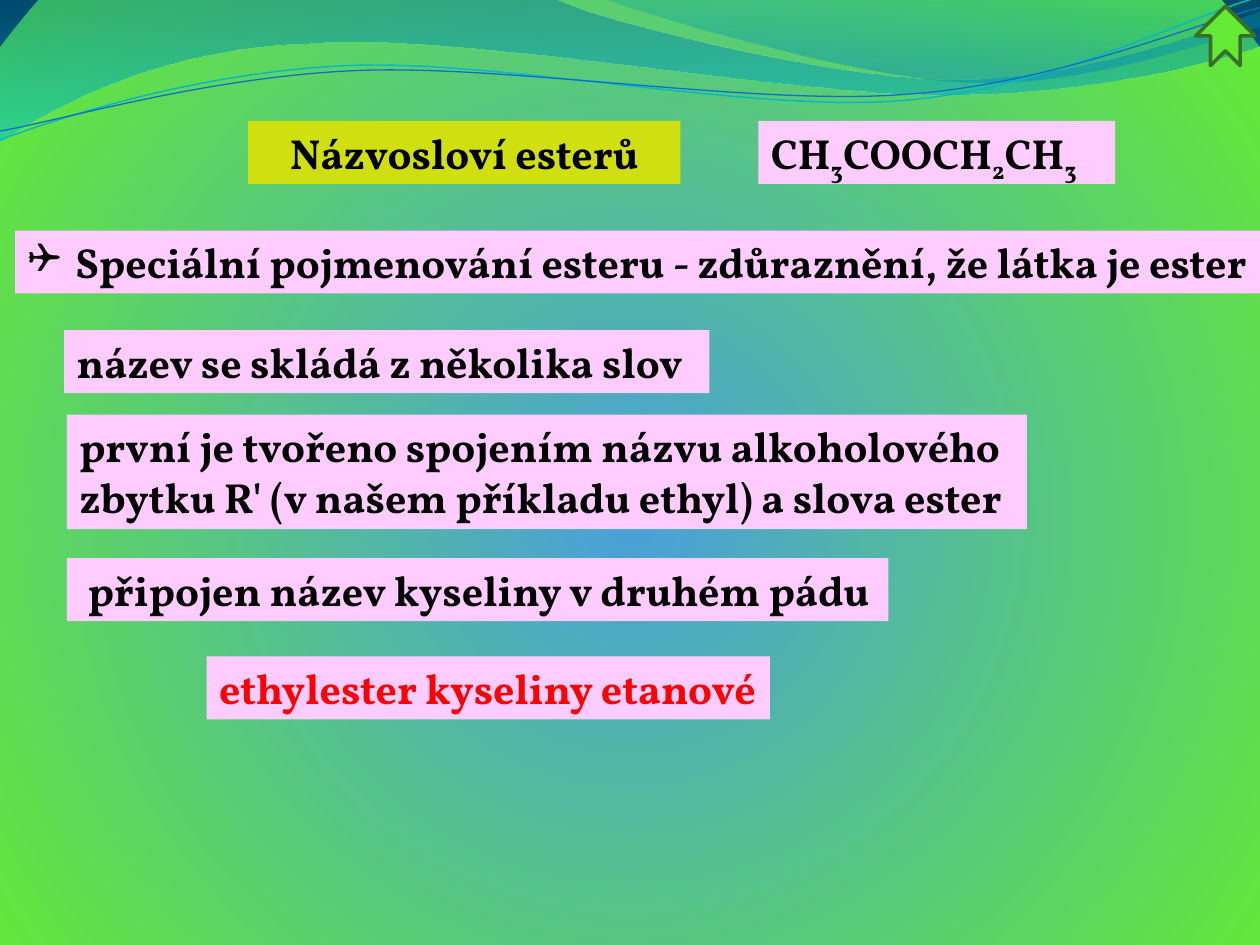
import math

import pptx
import pptx.util
import pptx.oxml
from lxml import etree
from pptx.dml.color import RGBColor
from pptx.enum.shapes import MSO_SHAPE
from pptx.enum.text import MSO_ANCHOR, MSO_AUTO_SIZE, PP_ALIGN
from pptx.oxml.ns import nsdecls, qn
from pptx.util import Inches, Pt

FONT = "Vollkorn"
BLACK, RED, PINK, OLIVE, GREEN = "000000", "FF0000", "FFCCFF", "D0DF0F", "64E935"

TITLE = ("Názvosloví esterů", (1.97, 0.96, 3.43, 0.5))
FORMULA = ["CH", "3", "COOCH", "2", "CH", "3"]  # digits are subscripts

# text runs, (left, top, width, height), colour, bullet
BOXES = [
    (["Speciální pojmenování esteru - zdůraznění, že látka je ester"],
     (0.12, 1.83, 9.88, 0.5), BLACK, "❑"),
    (["název se skládá z několika slov"], (0.51, 2.62, 5.12, 0.5), BLACK, None),
    (["ethylester kyseliny etanové"], (1.64, 5.21, 4.47, 0.5), RED, None),
    (["první je tvořeno spojením názvu alkoholového zbytku R' "
      "(v našem příkladu ethyl) a slova ester"],
     (0.53, 3.29, 7.62, 0.91), BLACK, None),
    (["\u00a0připojen název kyseliny v druhém pádu"],
     (0.53, 4.43, 6.52, 0.5), BLACK, None),
    (FORMULA, (6.02, 0.96, 2.83, 0.5), BLACK, None),
]

# start point, then segments: two numbers for a line, six for a Bézier curve
WAVES = [
    ([(0, 0), (4.4, -0.01), (4.76, 0.17, 6.64, 0.63, 7.58, 0.63),
      (8.53, 0.63, 9.58, 0.26, 10, 0.09), (10.01, 0.36),
      (9.83, 0.44, 8.7, 0.76, 7.46, 0.75), (6.22, 0.75, 3.82, 0.28, 2.57, 0.34),
      (1.29, 0.36, 0.46, 0.83, -0.01, 1.13)],
     [(0, "0074A1", 45), (100, "00C6CF", 55)]),
    ([(4.79, -0.01), (5.09, 0.11, 6.82, 0.62, 7.69, 0.65),
      (8.56, 0.69, 9.61, 0.32, 10, 0.21), (10, 0)],
     [(0, "00A1A9", 30), (80, "008BBF", 45)]),
]
CURVES = [
    ([(0, 1.11), (0.48, 0.93, 1.58, 0.57, 2.77, 0.52),
      (3.95, 0.47, 5.93, 0.89, 7.13, 0.8), (8.33, 0.71, 9.38, 0.15, 9.98, -0.02)],
     "0AB8BF", 0.85),
    ([(0, 1.04), (0.47, 0.96, 1.64, 0.61, 2.83, 0.56),
      (4.03, 0.51, 5.97, 0.84, 7.17, 0.75), (8.36, 0.67, 9.41, 0.21, 10, 0.06)],
     "0F6FC6", 0.75),
]
CURVE_ANGLE = 357.3
CURVE_CENTER = (4.99, 0.58)
BACKGROUND = [(0, "4A9FDA", 100), (100, GREEN, 100), (100, "002848", 100)]
CIRCLE = ('<a:path path="circle">'
          '<a:fillToRect l="10000" t="110000" r="10000" b="100000"/></a:path>')
DOWNWARD = '<a:lin ang="5400000" scaled="0"/>'


def rgb(color):
    return RGBColor.from_string(color)


def set_gradient(element, stops, direction):
    """Replace the element's first empty fill with a gradient."""
    stop_xml = "".join(
        f'<a:gs pos="{pos * 1000}"><a:srgbClr val="{color}">'
        f'<a:alpha val="{alpha * 1000}"/></a:srgbClr></a:gs>'
        for pos, color, alpha in stops)
    gradient = pptx.oxml.parse_xml(
        f'<a:gradFill {nsdecls("a")} rotWithShape="1">'
        f'<a:gsLst>{stop_xml}</a:gsLst>{direction}</a:gradFill>')
    empty = element.find(".//" + qn("a:noFill"))
    empty.getparent().replace(empty, gradient)


def turn(point, degrees):
    """Rotate a point clockwise about the centre of the thin curves."""
    cx, cy = CURVE_CENTER
    dx, dy = point[0] - cx, point[1] - cy
    cos, sin = math.cos(math.radians(degrees)), math.sin(math.radians(degrees))
    return cx + dx * cos - dy * sin, cy + dx * sin + dy * cos


def add_outline(s, segments, close, angle=0):
    """Draw straight legs through all nodes, then merge triples into Béziers."""
    nodes = [turn(seg[i:i + 2], -angle)
             for seg in segments for i in range(0, len(seg), 2)]
    points = [(Inches(x), Inches(y)) for x, y in nodes]
    builder = s.shapes.build_freeform(*points[0])
    builder.add_line_segments(points[1:], close=close)
    sp = builder.convert_to_shape()
    legs = iter(sp._element.findall(".//" + qn("a:lnTo")))
    for segment in segments[1:]:
        leg = next(legs)
        if len(segment) == 6:
            leg_list = [leg, next(legs), next(legs)]
            curve = etree.Element(qn("a:cubicBezTo"))
            leg.addprevious(curve)
            for old in leg_list:
                curve.append(old[0])
                old.getparent().remove(old)
    sp.rotation = angle
    sp.shadow.inherit = False
    sp.fill.background()
    return sp


def format_box(sp, at, fill, runs, color, align=PP_ALIGN.LEFT):
    sp.left, sp.top, sp.width, sp.height = map(Inches, at)
    sp.fill.solid()
    sp.fill.fore_color.rgb = rgb(fill)
    tf = sp.text_frame
    tf.word_wrap = True
    tf.auto_size = MSO_AUTO_SIZE.NONE
    tf.vertical_anchor = MSO_ANCHOR.TOP
    p = tf.paragraphs[0]
    p.alignment = align
    p.font.name, p.font.size, p.font.bold = FONT, Pt(24), True
    p.font.color.rgb = rgb(color)
    for text in runs:
        r = p.add_run()
        r.text = text
        if text.isdigit():
            r.font._element.set("baseline", "-25000")
    return p


def add_bullet(p, char):
    pPr = p._p.get_or_add_pPr()
    pPr.set("marL", str(Inches(0.38)))
    pPr.set("indent", str(-Inches(0.38)))
    for bullet in (etree.Element(qn("a:buFont"), typeface="Wingdings"),
                   etree.Element(qn("a:buChar"), char=char)):
        pPr.insert_element_before(bullet, "a:tabLst", "a:defRPr", "a:extLst")


def main():
    prs = pptx.Presentation()
    prs.slide_width, prs.slide_height = Inches(10), Inches(7.5)
    s = prs.slides.add_slide(prs.slide_layouts[5])
    s.background.fill.background()
    set_gradient(s._element, BACKGROUND, CIRCLE)

    for segments, stops in WAVES:
        sp = add_outline(s, segments, True)
        sp.line.fill.background()
        set_gradient(sp._element, stops, DOWNWARD)
    for segments, color, width in CURVES:
        sp = add_outline(s, segments, False, CURVE_ANGLE)
        sp.line.color.rgb = rgb(color)
        sp.line.width = Pt(width)

    title, at = TITLE
    format_box(s.shapes.title, at, OLIVE, [title], BLACK, PP_ALIGN.CENTER)
    for runs, at, color, bullet in BOXES:
        sp = s.shapes.add_textbox(*map(Inches, at))
        p = format_box(sp, at, PINK, runs, color)
        if bullet:
            add_bullet(p, bullet)

    arrow = s.shapes.add_shape(MSO_SHAPE.NOTCHED_RIGHT_ARROW,
                               *map(Inches, (9.49, 0.05, 0.47, 0.47)))
    arrow.rotation = 270
    arrow.shadow.inherit = False
    arrow.fill.solid()
    arrow.fill.fore_color.rgb = rgb(GREEN)
    arrow.line.color.rgb = rgb("387026")
    arrow.line.width = Pt(2)
    prs.save("out.pptx")


if __name__ == "__main__":
    main()
